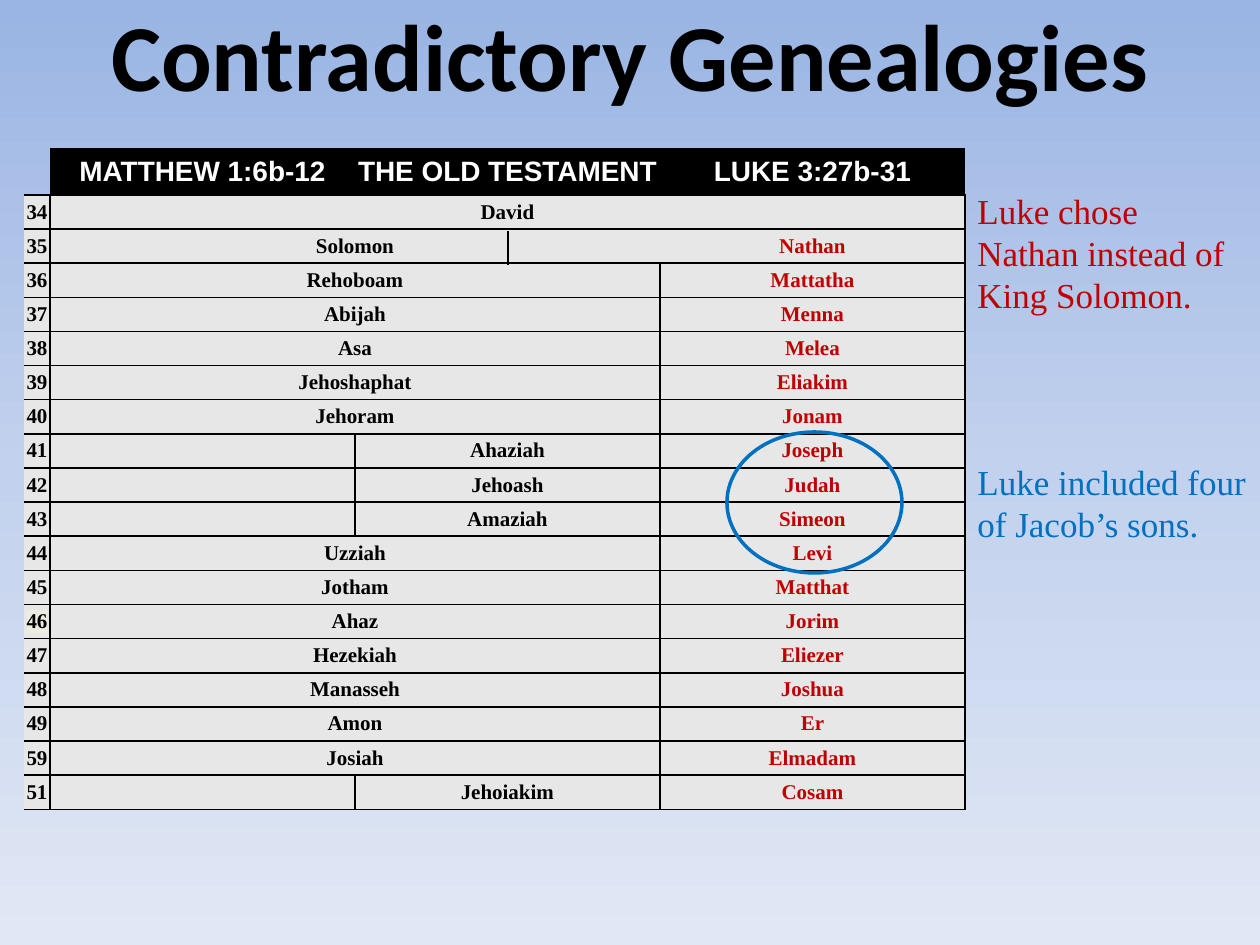
from copy import deepcopy

from lxml import etree
from pptx import Presentation
from pptx import util as u
from pptx.dml.color import RGBColor
from pptx.enum import shapes, text
from pptx.oxml.ns import qn

BLACK = RGBColor(0x00, 0x00, 0x00)
WHITE = RGBColor(0xFF, 0xFF, 0xFF)
GREY = RGBColor(0xE7, 0xE7, 0xE7)
CREAM = RGBColor(0xEE, 0xEC, 0xE1)
RED = RGBColor(0xC0, 0x00, 0x00)
BLUE = RGBColor(0x00, 0x70, 0xC0)
SKY = [RGBColor(0x9A, 0xB5, 0xE4), RGBColor(0xC2, 0xD1, 0xED), RGBColor(0xE1, 0xE8, 0xF5)]

SERIF = "Times New Roman"
PX_PER_INCH = 126

HEADERS = ["MATTHEW 1:6b-12", "THE OLD TESTAMENT", "LUKE 3:27b-31"]
# Number, shared or Old Testament name, name in Luke
GENERATIONS = [
    ("34", "David", None),
    ("35", "Solomon", "Nathan"),
    ("36", "Rehoboam", "Mattatha"),
    ("37", "Abijah", "Menna"),
    ("38", "Asa", "Melea"),
    ("39", "Jehoshaphat", "Eliakim"),
    ("40", "Jehoram", "Jonam"),
    ("41", "Ahaziah", "Joseph"),
    ("42", "Jehoash", "Judah"),
    ("43", "Amaziah", "Simeon"),
    ("44", "Uzziah", "Levi"),
    ("45", "Jotham", "Matthat"),
    ("46", "Ahaz", "Jorim"),
    ("47", "Hezekiah", "Eliezer"),
    ("48", "Manasseh", "Joshua"),
    ("49", "Amon", "Er"),
    ("59", "Josiah", "Elmadam"),
    ("51", "Jehoiakim", "Cosam"),
]
MISSING_IN_MATTHEW = {"Ahaziah", "Jehoash", "Amaziah", "Jehoiakim"}


def px(length):
    return u.Emu(round(length * 914400 / PX_PER_INCH))


def write(frame, words, size=12, font=SERIF, color=BLACK, bold=False, align=None, highlight=None):
    para = frame.paragraphs[0]
    para.alignment = align
    span = para.add_run()
    span.text = words
    span.font.size = u.Pt(size)
    span.font.name = font
    span.font.bold = bold
    span.font.color.rgb = color
    if highlight is not None:
        mark = etree.Element(qn("a:highlight"))
        etree.SubElement(mark, qn("a:srgbClr"), val=str(highlight))
        span.font._element.find(qn("a:latin")).addprevious(mark)


def set_background(page):
    fill = page.background.fill
    fill.gradient()
    fill.gradient_angle = 270
    first = page._element.find(".//" + qn("a:gs"))
    first.addnext(deepcopy(first))
    for index, (stop, color) in enumerate(zip(fill.gradient_stops, SKY)):
        stop.position = index / 2
        stop.color.rgb = color


def set_borders(cell, sides):
    props = cell._tc.get_or_add_tcPr()
    for index, side in enumerate("LRTB"):
        line = etree.Element(qn("a:ln" + side), w=str(u.Pt(1)))
        if side in sides:
            solid = etree.SubElement(line, qn("a:solidFill"))
            etree.SubElement(solid, qn("a:srgbClr"), val=str(BLACK))
        else:
            etree.SubElement(line, qn("a:noFill"))
        props.insert(index, line)


def fill_cell(cell, words=None, fill=GREY, sides="LRTB", **style):
    cell.margin_left = cell.margin_right = cell.margin_top = cell.margin_bottom = 0
    cell.vertical_anchor = text.MSO_ANCHOR.MIDDLE
    if fill is None:
        cell.fill.background()
    else:
        cell.fill.solid()
        cell.fill.fore_color.rgb = fill
    set_borders(cell, sides)
    if words:
        write(cell.text_frame, words, bold=True, align=text.PP_ALIGN.CENTER, **style)
    else:
        # Keeps an empty cell from stretching its row
        etree.SubElement(cell.text_frame.paragraphs[0]._p, qn("a:endParaRPr"), sz="1200")


def add_genealogy(page):
    count = len(GENERATIONS)
    frame = page.shapes.add_table(count + 1, 4, px(24), px(148), px(941), px(662))
    table = frame.table
    for column, width in zip(table.columns, [26, 305, 305, 305]):
        column.width = px(width)
    table.rows[0].height = px(47)
    for row in list(table.rows)[1:]:
        row.height = px(615 / count)

    # Header row
    fill_cell(table.cell(0, 0), fill=None, sides="B")
    for column, words in enumerate(HEADERS, 1):
        fill_cell(table.cell(0, column), words, fill=BLACK, sides="B",
                  size=16, font="Arial", color=WHITE)

    # One row for each generation
    for row, (number, name, luke) in enumerate(GENERATIONS, 1):
        label, matthew, old, last = [table.cell(row, column) for column in range(4)]
        fill_cell(label, number, sides="RTB", highlight=CREAM if number == "46" else None)
        if name in MISSING_IN_MATTHEW:
            fill_cell(matthew)
            fill_cell(old, name)
        else:
            split = name == "Solomon"
            fill_cell(matthew, name, sides="LTB" if split else "LRTB")
            fill_cell(old, sides="TB" if split or luke is None else "RTB")
            matthew.merge(old if luke else last)
        fill_cell(last, luke, color=RED, sides="RTB" if name in ("David", "Solomon") else "LRTB")


def add_note(parent, words, left, top, width, height, color):
    box = parent.shapes.add_textbox(px(left), px(top), px(width), px(height))
    box.text_frame.word_wrap = True
    box.text_frame.auto_size = text.MSO_AUTO_SIZE.SHAPE_TO_FIT_TEXT
    write(box.text_frame, words, size=20, color=color)


def add_ring(parent, left, top, width, height):
    ring = parent.shapes.add_shape(shapes.MSO_SHAPE.OVAL, px(left), px(top), px(width), px(height))
    ring.shadow.inherit = False
    ring.fill.background()
    ring.line.color.rgb = BLUE
    ring.line.width = u.Pt(2)


def add_divider(page, x, top, bottom):
    line = page.shapes.add_connector(shapes.MSO_CONNECTOR.STRAIGHT, px(x), px(top), px(x), px(bottom))
    line.line.color.rgb = BLACK
    line.line.width = u.Pt(1.25)
    etree.SubElement(line._element.spPr, qn("a:effectLst"))


def add_title(page, words):
    title = page.shapes.title
    title.left, title.top, title.width, title.height = px(0), px(0), px(1260), px(107)
    title.text_frame.vertical_anchor = text.MSO_ANCHOR.MIDDLE
    write(title.text_frame, words, size=54, font="Calibri", bold=True, align=text.PP_ALIGN.CENTER)


def main():
    deck = Presentation()
    deck.slide_width, deck.slide_height = px(1260), px(945)
    page = deck.slides.add_slide(deck.slide_layouts[5])
    set_background(page)
    add_title(page, "Contradictory Genealogies")
    add_genealogy(page)

    # Remarks beside the table
    add_note(page, "Luke chose Nathan instead of King Solomon.", 965, 183, 295, 140, RED)
    sons = page.shapes.add_group_shape()
    add_ring(sons, 727, 432, 175, 141)
    add_note(sons, "Luke included four of Jacob’s sons.", 965, 454, 295, 97, BLUE)

    # Split between Solomon and Nathan
    add_divider(page, 508, 231, 265)
    deck.save("out.pptx")


if __name__ == "__main__":
    main()
